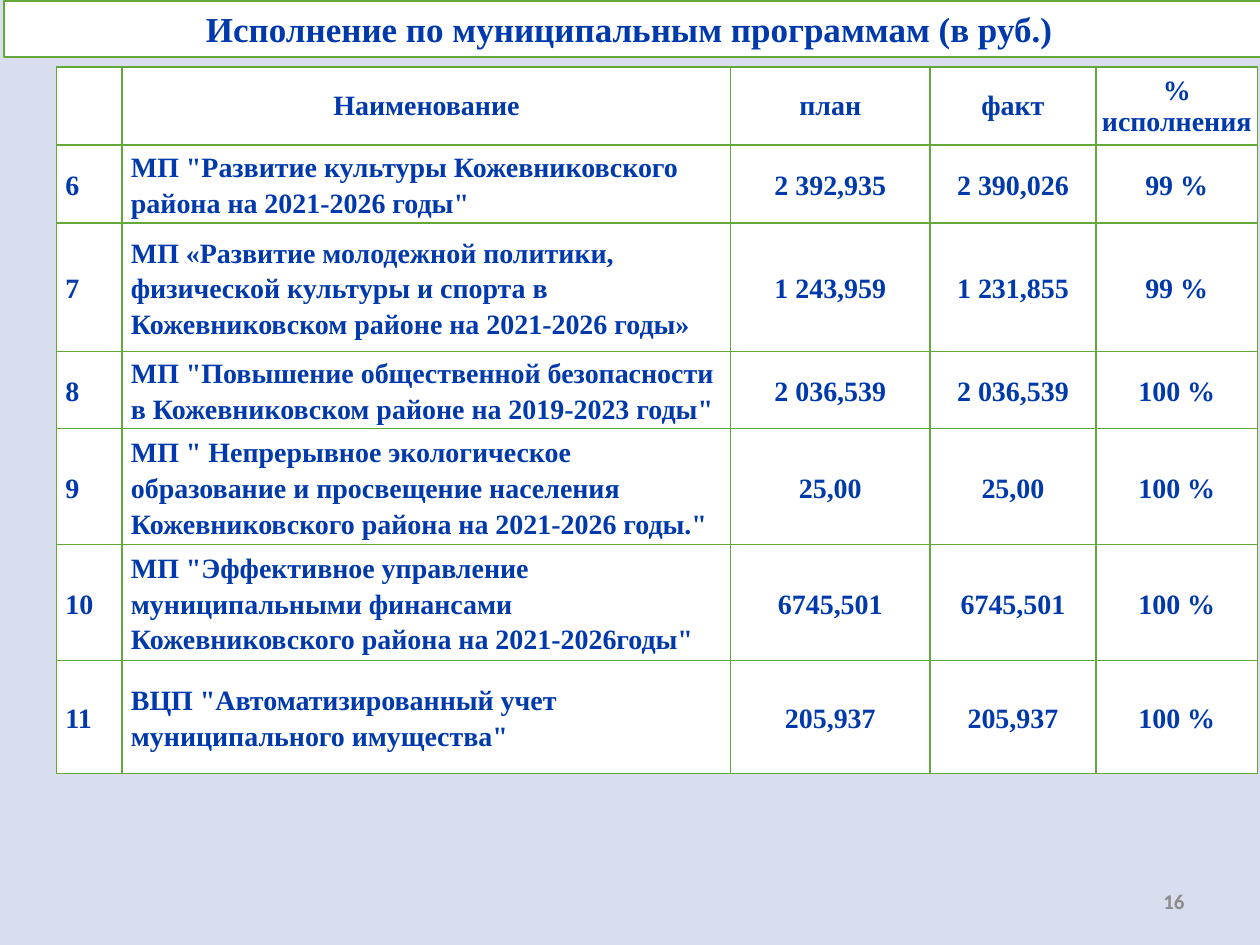
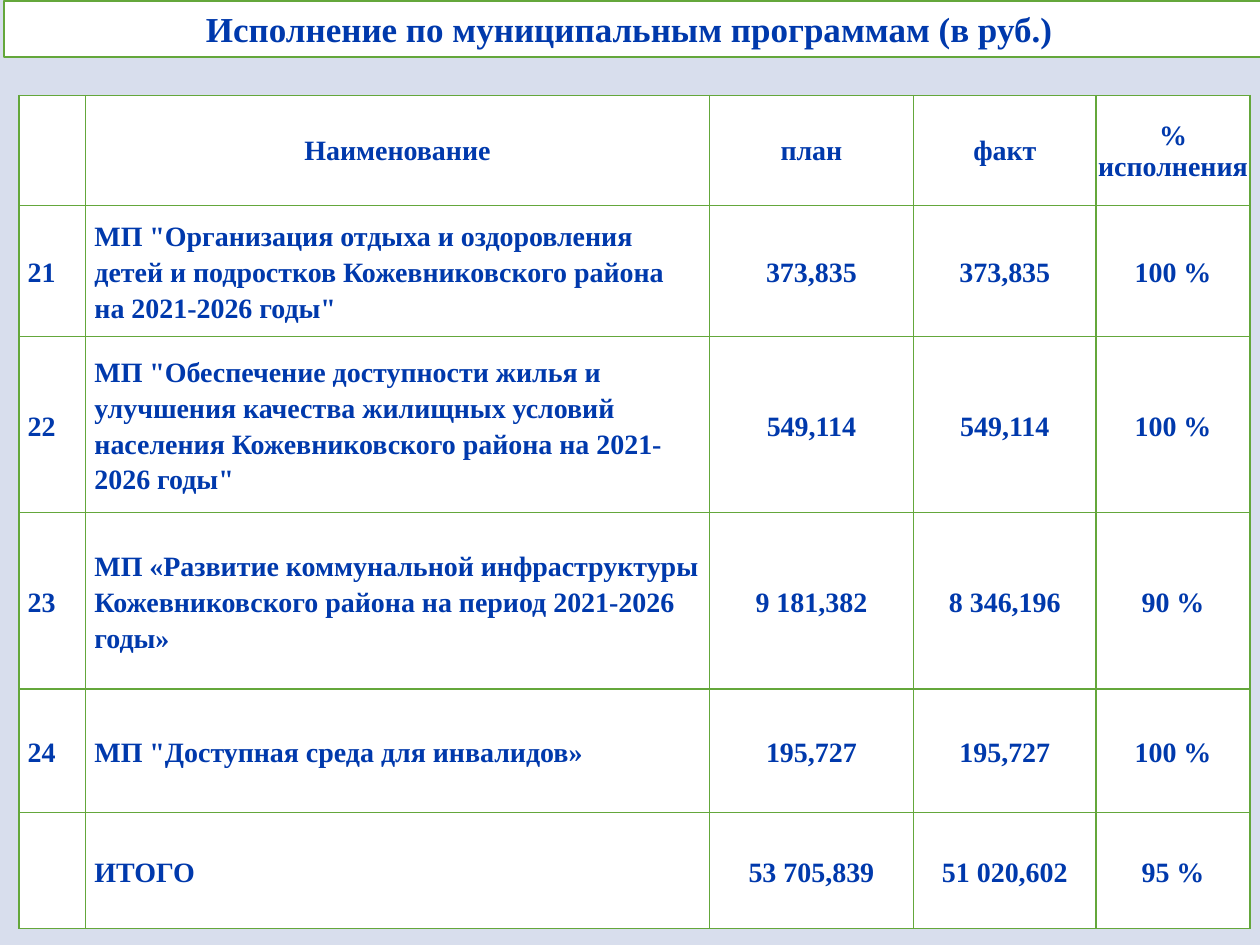
"""Build two slides of municipal programme spending tables."""
from lxml import etree
from pptx import Presentation
from pptx import util as u
from pptx.dml.color import RGBColor
from pptx.enum import shapes, text
from pptx.oxml.ns import qn

COLORS = {"back": "D8DEED", "fill": "FFFFFF", "line": "64A73B",
          "text": "0039AC", "page": "8C8C8C"}
SERIF = "Times New Roman"
TITLE = "Исполнение по муниципальным программам (в руб.) "
HEAD = ("", "Наименование", "план", "факт", "% исполнения")
PAGES = [
    {
        "box": (0.45, 0.53, 9.53, 5.62),
        "cols": (0.52, 4.83, 1.58, 1.32, 1.28),
        "rows": (0.62, 0.62, 1.02, 0.55, 0.8, 0.47, 0.9),
        "number": "16",
        "data": [
            ("6", 'МП "Развитие культуры Кожевниковского района на 2021-2026 годы"',
             "2 392,935", "2 390,026", "99 %"),
            ("7", "МП «Развитие молодежной политики, физической культуры и спорта "
             "в Кожевниковском районе на 2021-2026 годы»",
             "1 243,959", "1 231,855", "99 %"),
            ("8", 'МП "Повышение общественной безопасности в Кожевниковском районе '
             'на 2019-2023 годы"', "2 036,539", "2 036,539", "100 %"),
            ("9", 'МП " Непрерывное экологическое образование и просвещение населения '
             'Кожевниковского района на 2021-2026 годы."', "25,00", "25,00", "100 %"),
            ("10", 'МП "Эффективное управление муниципальными финансами '
             'Кожевниковского района на 2021-2026годы"',
             "6745,501", "6745,501", "100 %"),
            ("11", 'ВЦП "Автоматизированный учет муниципального имущества"',
             "205,937", "205,937", "100 %"),
        ],
    },
    {
        "box": (0.15, 0.76, 9.77, 6.62),
        "cols": (0.53, 4.95, 1.62, 1.45, 1.22),
        "rows": (0.87, 1.04, 1.4, 1.4, 0.98, 0.92),
        "number": "",
        "data": [
            ("21", 'МП "Организация отдыха и оздоровления детей и подростков '
             'Кожевниковского района на 2021-2026 годы"',
             "373,835", "373,835", "100 %"),
            ("22", 'МП "Обеспечение доступности жилья и улучшения качества жилищных '
             'условий населения Кожевниковского района на 2021-2026 годы"',
             "549,114", "549,114", "100 %"),
            ("23", "МП «Развитие коммунальной инфраструктуры Кожевниковского района "
             "на период 2021-2026 годы»", "9 181,382", "8 346,196", "90 %"),
            ("24", 'МП "Доступная среда для инвалидов»',
             "195,727", "195,727", "100 %"),
            ("", "ИТОГО", "53 705,839", "51 020,602", "95 %"),
        ],
    },
]


def rgb(name):
    return RGBColor.from_string(COLORS[name])


def paint(part, name):
    part.fill.solid()
    part.fill.fore_color.rgb = rgb(name)


def write(frame, words, size, align, font=SERIF, color="text"):
    para = frame.paragraphs[0]
    para.text = words
    para.alignment = align
    para.font.size = u.Pt(size)
    para.font.name = font
    para.font.bold = True
    para.font.color.rgb = rgb(color)
    return para


def add_title(slide):
    band = slide.shapes.add_shape(shapes.MSO_SHAPE.RECTANGLE, u.Inches(0.03),
                                  u.Inches(0.01), u.Inches(10), u.Inches(0.44))
    band.shadow.inherit = False
    paint(band, "fill")
    band.line.color.rgb = rgb("line")
    band.line.width = u.Pt(1.25)
    band.text_frame.auto_size = text.MSO_AUTO_SIZE.SHAPE_TO_FIT_TEXT
    write(band.text_frame, TITLE, 20, text.PP_ALIGN.CENTER)


def add_number(slide, number):
    box = slide.shapes.add_textbox(u.Inches(7.17), u.Inches(6.95),
                                   u.Inches(2.33), u.Inches(0.4))
    box.text_frame.word_wrap = True
    box.text_frame.vertical_anchor = text.MSO_ANCHOR.MIDDLE
    write(box.text_frame, number, 12, text.PP_ALIGN.RIGHT, "Calibri", "page")


def add_edges(cell):
    props = cell._tc.get_or_add_tcPr()
    for side in ("lnL", "lnR", "lnT", "lnB"):
        line = etree.SubElement(props, qn("a:" + side), w=str(u.Pt(1)))
        fill = etree.SubElement(line, qn("a:solidFill"))
        etree.SubElement(fill, qn("a:srgbClr"), val=COLORS["line"])


def fill_cell(cell, words, head, left):
    add_edges(cell)
    paint(cell, "fill")
    side = u.Inches(0.01 if head else 0.07)
    cell.margin_left = cell.margin_right = side
    cell.margin_top = u.Inches(0.01 if head else 0)
    cell.margin_bottom = 0
    cell.vertical_anchor = text.MSO_ANCHOR.MIDDLE
    align = text.PP_ALIGN.LEFT if left else text.PP_ALIGN.CENTER
    para = write(cell.text_frame, words, 16, align)
    if not head:
        para.line_spacing = 1.15


def add_grid(slide, page):
    data = [HEAD] + page["data"]
    box = [u.Inches(n) for n in page["box"]]
    frame = slide.shapes.add_table(len(data), len(HEAD), *box)
    table = frame.table
    table.first_row = table.horz_banding = False
    for col, width in zip(table.columns, page["cols"]):
        col.width = u.Inches(width)
    for row, height in zip(table.rows, page["rows"]):
        row.height = u.Inches(height)
    frame.width, frame.height = box[2:]
    for r, line in enumerate(data):
        for c, words in enumerate(line):
            fill_cell(table.cell(r, c), words, r == 0, r > 0 and c < 2)


def main():
    deck = Presentation()
    deck.slide_width, deck.slide_height = u.Inches(10), u.Inches(7.5)
    for page in PAGES:
        slide = deck.slides.add_slide(deck.slide_layouts[6])
        paint(slide.background, "back")
        if page["number"]:
            add_number(slide, page["number"])
        add_title(slide)
        add_grid(slide, page)
    deck.save("out.pptx")


if __name__ == "__main__":
    main()
